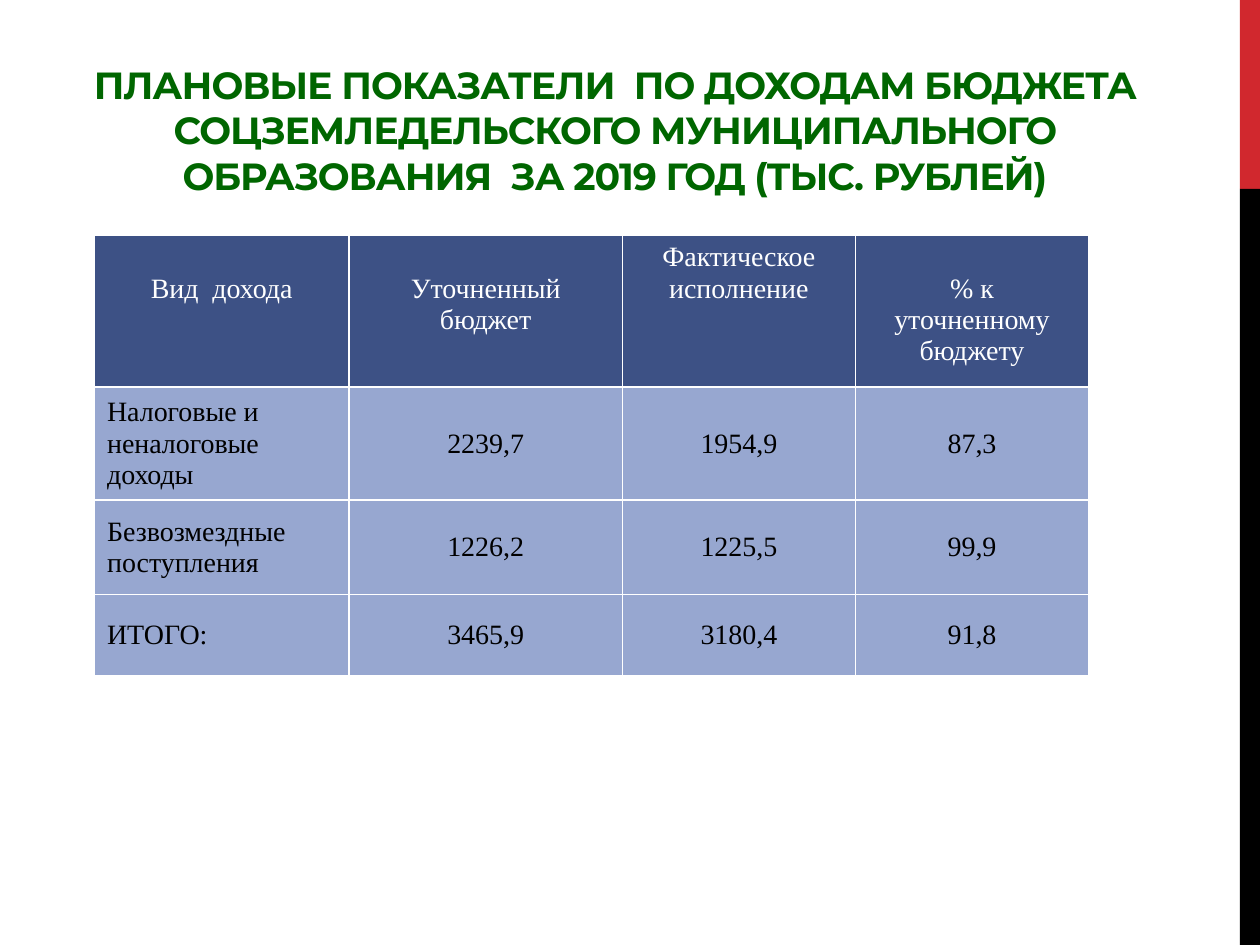
import pptx
import pptx.dml.color
import pptx.enum.shapes
import pptx.enum.text
import pptx.oxml.ns
import pptx.util
from lxml import etree

Inches = pptx.util.Inches
Pt = pptx.util.Pt
RGBColor = pptx.dml.color.RGBColor
PP_ALIGN = pptx.enum.text.PP_ALIGN
MSO_ANCHOR = pptx.enum.text.MSO_ANCHOR

RED = RGBColor(0xD1, 0x28, 0x2E)
BLACK = RGBColor(0, 0, 0)
WHITE = RGBColor(0xFF, 0xFF, 0xFF)
GREEN = RGBColor(0, 0x66, 0)
HEADER_BLUE = RGBColor(0x3D, 0x51, 0x85)
BODY_BLUE = RGBColor(0x97, 0xA7, 0xD0)

TITLE = (
    "ПЛАНОВЫЕ ПОКАЗАТЕЛИ  ПО ДОХОДАМ БЮДЖЕТА СОЦЗЕМЛЕДЕЛЬСКОГО "
    "МУНИЦИПАЛЬНОГО ОБРАЗОВАНИЯ  ЗА 2019 ГОД (ТЫС. РУБЛЕЙ)"
)
INCOME = [
    ["Вид  дохода", "Уточненный бюджет", "Фактическое исполнение", "% к\nуточненному\nбюджету"],
    ["Налоговые и неналоговые\nдоходы", "2239,7", "1954,9", "87,3"],
    ["Безвозмездные поступления", "1226,2", "1225,5", "99,9"],
    ["ИТОГО:", "3465,9", "3180,4", "91,8"],
]
COLUMN_WIDTHS = [2.02, 2.17, 1.85, 1.85]
ROW_HEIGHTS = [1.2, 0.84, 0.75, 0.64]
ACTUAL_COLUMN = 2


def write_text(frame, text, *, font, size, color, bold=False, align=PP_ALIGN.CENTER, spacing=0):
    frame.text = text
    for paragraph in frame.paragraphs:
        paragraph.alignment = align
        for run in paragraph.runs:
            run.font.name = font
            run.font.size = Pt(size)
            run.font.bold = bold
            run.font.color.rgb = color
            if spacing:
                run.font._element.set("spc", str(round(spacing * 100)))


class BudgetSlide:
    """Hold the style and the current slide, and add each kind of element."""

    title_font = "Montserrat"
    table_font = "Times New Roman"

    def __init__(self, presentation):
        self.slide = presentation.slides.add_slide(presentation.slide_layouts[6])

    def add_bar(self, left, top, width, height, color):
        bar = self.slide.shapes.add_shape(
            pptx.enum.shapes.MSO_SHAPE.RECTANGLE,
            Inches(left), Inches(top), Inches(width), Inches(height))
        bar.shadow.inherit = False
        bar.fill.solid()
        bar.fill.fore_color.rgb = color
        bar.line.fill.background()

    def add_title(self, left, top, width, height, text):
        title = self.slide.shapes.add_textbox(
            Inches(left), Inches(top), Inches(width), Inches(height))
        title.text_frame.word_wrap = True
        title.text_frame.vertical_anchor = MSO_ANCHOR.BOTTOM
        write_text(title.text_frame, text, font=self.title_font, size=21.6,
                   color=GREEN, bold=True, spacing=-0.6)

    def add_borders(self, cell, color, width):
        properties = cell._tc.get_or_add_tcPr()
        qn = pptx.oxml.ns.qn
        for side in ("a:lnL", "a:lnR", "a:lnT", "a:lnB"):
            line = etree.SubElement(properties, qn(side), w=str(Pt(width)))
            fill = etree.SubElement(line, qn("a:solidFill"))
            etree.SubElement(fill, qn("a:srgbClr"), val=str(color))

    def fill_cell(self, cell, text, row, column):
        header = row == 0
        self.add_borders(cell, WHITE, 1)
        cell.fill.solid()
        cell.fill.fore_color.rgb = HEADER_BLUE if header else BODY_BLUE
        cell.vertical_anchor = MSO_ANCHOR.TOP if header else MSO_ANCHOR.MIDDLE
        if header and column != ACTUAL_COLUMN:
            cell.margin_top = Inches(0.3)
        write_text(cell.text_frame, text, font=self.table_font, size=16,
                   color=WHITE if header else BLACK,
                   align=PP_ALIGN.CENTER if header or column else PP_ALIGN.LEFT)

    def add_table(self, left, top, widths, heights, rows):
        table = self.slide.shapes.add_table(
            len(rows), len(widths), Inches(left), Inches(top),
            Inches(sum(widths)), Inches(sum(heights))).table
        for column, width in zip(table.columns, widths):
            column.width = Inches(width)
        for table_row, height in zip(table.rows, heights):
            table_row.height = Inches(height)
        for row, texts in enumerate(rows):
            for column, text in enumerate(texts):
                self.fill_cell(table.cell(row, column), text, row, column)


def main():
    presentation = pptx.Presentation()
    presentation.slide_width = Inches(10)
    presentation.slide_height = Inches(7.5)
    budget = BudgetSlide(presentation)
    budget.add_bar(9.84, 0, 0.16, 1.5, RED)
    budget.add_bar(9.84, 1.5, 0.16, 6, BLACK)
    budget.add_title(0.43, 0.36, 8.9, 1.26, TITLE)
    budget.add_table(0.75, 1.87, COLUMN_WIDTHS, ROW_HEIGHTS, INCOME)
    presentation.save("out.pptx")


if __name__ == "__main__":
    main()
